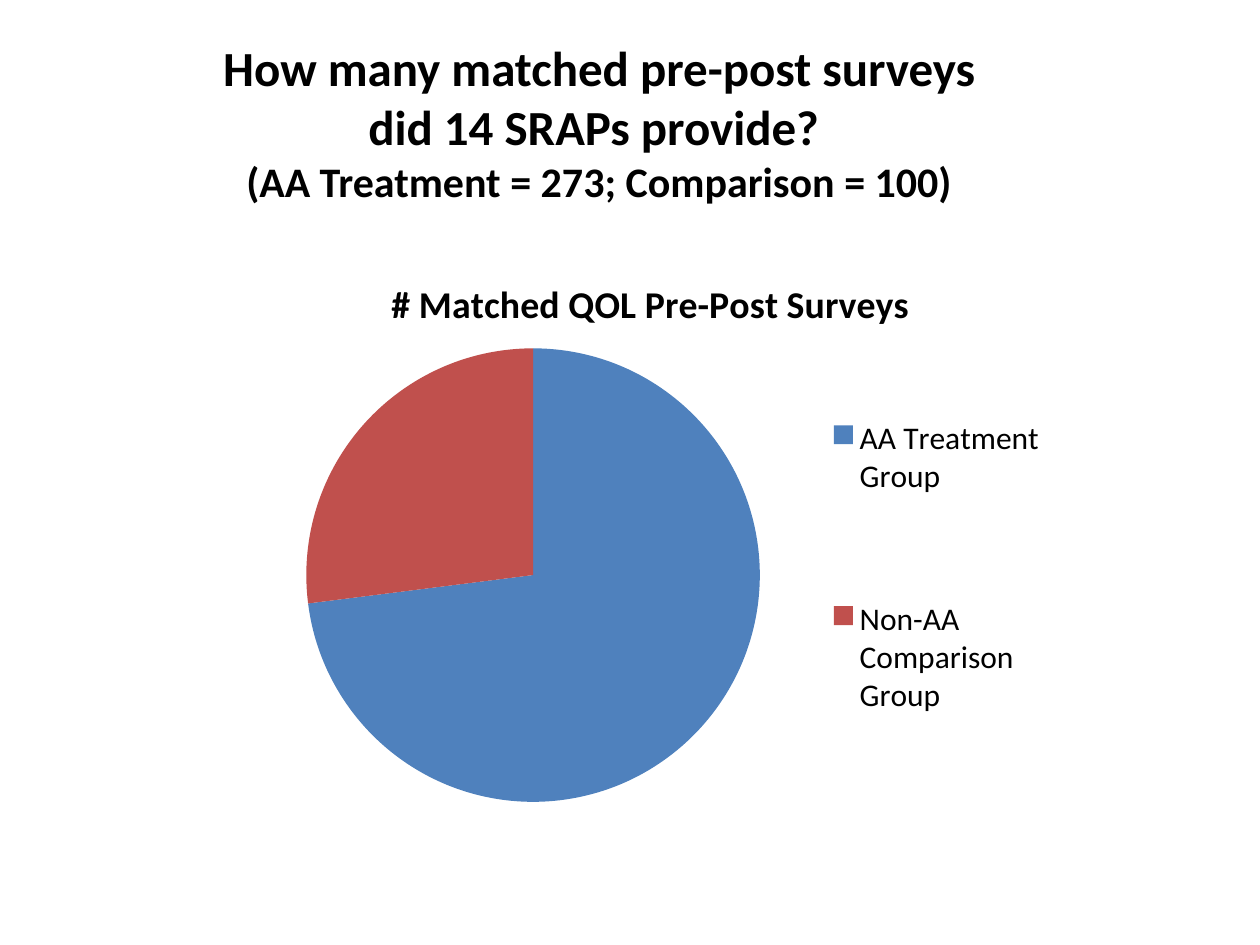
import pptx
import pptx.util
import pptx.dml.color
import pptx.chart.data
import pptx.enum.chart
import pptx.enum.text
import pptx.oxml
import pptx.oxml.ns

Inches = pptx.util.Inches
FACE = "Calibri"
COLORS = {"text": "000000", "treat": "4F81BD", "comp": "C0504D"}


def style(font, size, bold):
    font.name = FACE
    font.size = pptx.util.Pt(size)
    font.bold = bold
    font.color.rgb = pptx.dml.color.RGBColor.from_string(COLORS["text"])


def layout(part, x, y, w, h, inner=False):
    """Place a chart part by fractions of the chart area."""
    for old in part.findall(pptx.oxml.ns.qn("c:layout")):
        part.remove(old)
    target = '<c:layoutTarget val="inner"/>' if inner else ""
    node = pptx.oxml.parse_xml(
        f'<c:layout {pptx.oxml.ns.nsdecls("c")}><c:manualLayout>{target}'
        '<c:xMode val="edge"/><c:yMode val="edge"/>'
        f'<c:x val="{x}"/><c:y val="{y}"/><c:w val="{w}"/><c:h val="{h}"/>'
        '</c:manualLayout></c:layout>')
    # The layout follows the legend position, and comes first in the plot area
    pos = part.find(pptx.oxml.ns.qn("c:legendPos"))
    part.insert(0 if pos is None else part.index(pos) + 1, node)


def add_title(slide):
    title = slide.shapes.title
    title.left, title.top = Inches(1.42), Inches(0.25)
    title.width, title.height = Inches(6.67), Inches(1.25)
    frame = title.text_frame
    frame.text = ("How many matched pre-post surveys did 14 SRAPs provide? \v"
                  "(AA Treatment = 273; Comparison = 100)")
    frame.word_wrap = True
    frame.auto_size = pptx.enum.text.MSO_AUTO_SIZE.NONE
    frame.vertical_anchor = pptx.enum.text.MSO_ANCHOR.TOP
    para = frame.paragraphs[0]
    para.alignment = pptx.enum.text.PP_ALIGN.CENTER
    for run, size in zip(para.runs, (28, 24)):
        style(run.font, size, True)


def add_pie(slide):
    name = "# Matched QOL Pre-Post Surveys"
    data = pptx.chart.data.CategoryChartData()
    data.categories = ["AA Treatment Group", "Non-AA Comparison Group"]
    data.add_series(name, (73, 27))
    chart = slide.shapes.add_chart(
        pptx.enum.chart.XL_CHART_TYPE.PIE, Inches(1.83), Inches(2),
        Inches(6.67), Inches(4.5), data).chart
    style(chart.font, 18, False)

    # Chart title
    chart.has_title = True
    head = chart.chart_title.text_frame
    head.text = name
    style(head.paragraphs[0].runs[0].font, 21.6, True)
    chart.chart_title.include_in_layout = False

    # Slices
    plot = chart.plots[0]
    plot.vary_by_categories = True
    for i, key in enumerate(("treat", "comp")):
        fill = plot.series[0].points[i].format.fill
        fill.solid()
        fill.fore_color.rgb = pptx.dml.color.RGBColor.from_string(COLORS[key])

    # Legend and placing
    chart.has_legend = True
    legend = chart.legend
    legend.position = pptx.enum.chart.XL_LEGEND_POSITION.RIGHT
    legend.include_in_layout = False
    style(legend.font, 18, False)
    area = chart.element.find(".//" + pptx.oxml.ns.qn("c:plotArea"))
    layout(area, 0.09, 0.17, 0.54, 0.8, inner=True)
    box = chart.element.find(".//" + pptx.oxml.ns.qn("c:legend"))
    layout(box, 0.7, 0.11, 0.28, 0.89)


def main():
    deck = pptx.Presentation()
    deck.slide_width, deck.slide_height = Inches(10), Inches(7.5)
    slide = deck.slides.add_slide(deck.slide_layouts[5])
    add_title(slide)
    add_pie(slide)
    deck.save("out.pptx")


if __name__ == "__main__":
    main()
